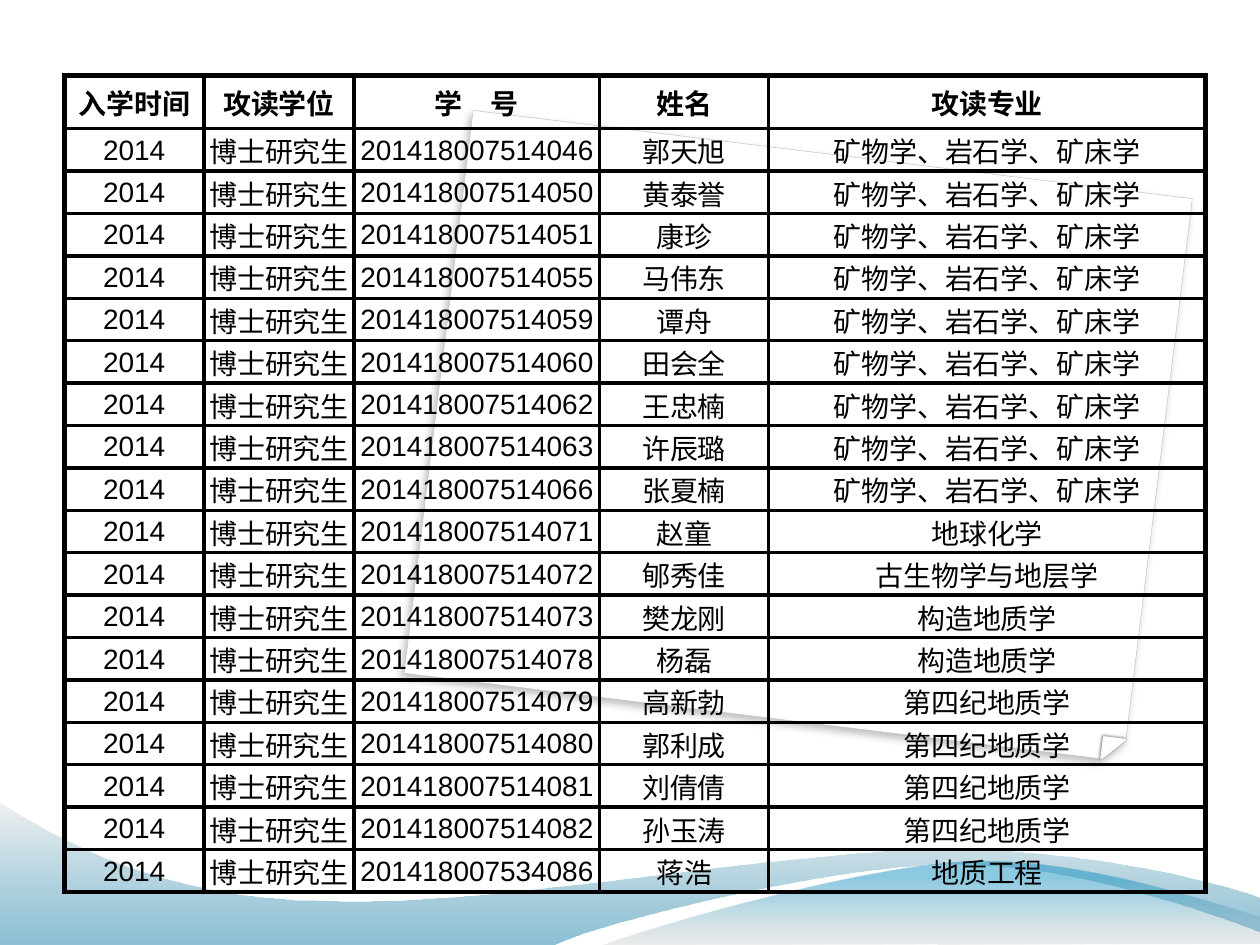
"""Build a slide with the roster of doctoral students enrolled in 2014."""
import pptx
import pptx.dml.color
import pptx.enum.shapes
import pptx.enum.text
import pptx.oxml
import pptx.oxml.ns
import pptx.util
from pptx.util import Inches

BLACK = pptx.dml.color.RGBColor(0x00, 0x00, 0x00)
WHITE = pptx.dml.color.RGBColor(0xFF, 0xFF, 0xFF)
PAPER_EDGE = pptx.dml.color.RGBColor(0xC0, 0xC0, 0xC0)
DEEP_BLUE = pptx.dml.color.RGBColor(0x00, 0x74, 0xA1)
BRIGHT_BLUE = pptx.dml.color.RGBColor(0x00, 0x8B, 0xBF)
PALE_GREY = pptx.dml.color.RGBColor(0xE7, 0xE7, 0xE7)
MID_GREY = pptx.dml.color.RGBColor(0xBD, 0xBD, 0xBD)
SHAPES = pptx.enum.shapes.MSO_SHAPE
HEADINGS = ["入学时间", "攻读学位", "学　号", "姓名", "攻读专业"]
COLUMN_WIDTHS = [1.11, 1.19, 1.95, 1.34, 3.47]
MINERALOGY = "矿物学、岩石学、矿床学"
STRUCTURAL = "构造地质学"
QUATERNARY = "第四纪地质学"
STUDENTS = [
    ("201418007514046", "郭天旭", MINERALOGY),
    ("201418007514050", "黄泰誉", MINERALOGY),
    ("201418007514051", "康珍", MINERALOGY),
    ("201418007514055", "马伟东", MINERALOGY),
    ("201418007514059", "谭舟", MINERALOGY),
    ("201418007514060", "田会全", MINERALOGY),
    ("201418007514062", "王忠楠", MINERALOGY),
    ("201418007514063", "许辰璐", MINERALOGY),
    ("201418007514066", "张夏楠", MINERALOGY),
    ("201418007514071", "赵童", "地球化学"),
    ("201418007514072", "郇秀佳", "古生物学与地层学"),
    ("201418007514073", "樊龙刚", STRUCTURAL),
    ("201418007514078", "杨磊", STRUCTURAL),
    ("201418007514079", "高新勃", QUATERNARY),
    ("201418007514080", "郭利成", QUATERNARY),
    ("201418007514081", "刘倩倩", QUATERNARY),
    ("201418007514082", "孙玉涛", QUATERNARY),
    ("201418007534086", "蒋浩", "地质工程"),
]
BACK_WAVE = [
    (0, 7.5), (4.4, 7.5),
    (4.76, 7.32, 6.64, 6.86, 7.58, 6.86), (8.53, 6.86, 9.58, 7.24, 10, 7.4),
    (10.01, 7.13),
    (9.83, 7.05, 8.7, 6.73, 7.46, 6.74), (6.22, 6.74, 3.82, 7.21, 2.57, 7.15),
    (1.29, 7.14, 0.46, 6.66, -0.01, 6.36),
]
FRONT_WAVE = [
    (4.79, 7.5),
    (5.09, 7.38, 6.82, 6.87, 7.69, 6.84), (8.56, 6.8, 9.61, 7.17, 10, 7.28),
    (10, 7.49),
]


def xml(markup):
    namespace = pptx.oxml.ns.nsdecls("a")
    return pptx.oxml.parse_xml(markup.replace(" ", f" {namespace} ", 1))


class RosterSlide:
    latin_font = "Arial"
    chinese_font = "Noto Sans CJK SC"
    text_size = pptx.util.Pt(16)
    inner_border = 2.25
    outer_border = 3

    def __init__(self, slide):
        self.slide = slide

    def paper(self, kind, box, edge, edge_width, shadow, adjustments=()):
        sheet = self.slide.shapes.add_shape(kind, *map(Inches, box))
        for index, value in enumerate(adjustments):
            sheet.adjustments[index] = value
        sheet.rotation = 7
        properties = sheet.element.spPr
        properties.xfrm.set("flipV", "1")
        sheet.fill.solid()
        sheet.fill.fore_color.rgb = WHITE
        sheet.line.color.rgb = edge
        sheet.line.width = pptx.util.Pt(edge_width)
        sheet.shadow.inherit = False
        opacity, blur, distance, angle = shadow
        properties.find(pptx.oxml.ns.qn("a:effectLst")).append(xml(
            f'<a:outerShdw blurRad="{pptx.util.Pt(blur)}" dist="{pptx.util.Pt(distance)}"'
            f' dir="{angle * 60000}" algn="tl" rotWithShape="0">'
            f'<a:srgbClr val="{BLACK}"><a:alpha val="{opacity * 1000}"/></a:srgbClr>'
            '</a:outerShdw>'))

    def wave(self, segments, stops):
        ends = [(Inches(segment[-2]), Inches(segment[-1])) for segment in segments]
        builder = self.slide.shapes.build_freeform(*ends[0])
        builder.add_line_segments(ends[1:])
        wave = builder.convert_to_shape()
        properties = wave.element.spPr
        sides = list(properties.iter(pptx.oxml.ns.qn("a:lnTo")))
        for side, segment in zip(sides, segments[1:]):
            if len(segment) == 6:
                points = "".join(
                    f'<a:pt x="{Inches(x) - wave.left}" y="{Inches(y) - wave.top}"/>'
                    for x, y in zip(segment[::2], segment[1::2]))
                curve = f"<a:cubicBezTo >{points}</a:cubicBezTo>"
                side.getparent().replace(side, xml(curve))
        wave.shadow.inherit = False
        wave.line.fill.background()
        wave.fill.gradient()
        wave.fill.gradient_angle = 90
        for stop, (position, colour, _) in zip(wave.fill.gradient_stops, stops):
            stop.position = position
            stop.color.rgb = colour
        colours = list(properties.iter(pptx.oxml.ns.qn("a:srgbClr")))
        for colour, (_, _, opacity) in zip(colours, stops):
            for adjustment in list(colour):
                colour.remove(adjustment)
            colour.append(xml(f'<a:alpha val="{opacity * 1000}"/>'))

    def cell(self, cell, text, heading, borders):
        cell.text = text
        cell.vertical_anchor = pptx.enum.text.MSO_ANCHOR.MIDDLE
        if not heading:
            cell.margin_left = cell.margin_right = cell.margin_top = Inches(0.01)
            cell.margin_bottom = 0
        paragraph = cell.text_frame.paragraphs[0]
        paragraph.alignment = pptx.enum.text.PP_ALIGN.CENTER
        font = paragraph.font
        font.name = self.chinese_font if heading else self.latin_font
        font.size = self.text_size
        font.bold = heading
        font.color.rgb = BLACK
        latin = next(paragraph._p.iter(pptx.oxml.ns.qn("a:latin")))
        latin.addnext(xml(f'<a:ea typeface="{self.chinese_font}"/>'))
        properties = cell._tc.get_or_add_tcPr()
        for side, width in borders.items():
            properties.append(xml(
                f'<a:ln{side} w="{pptx.util.Pt(width)}"><a:solidFill>'
                f'<a:srgbClr val="{BLACK}"/></a:solidFill></a:ln{side}>'))
        cell.fill.background()

    def roster(self, rows, box, header_height):
        height = box[-1]
        frame = self.slide.shapes.add_table(
            len(rows), len(COLUMN_WIDTHS), *map(Inches, box))
        table = frame.table
        table.first_row = table.horz_banding = False
        for column, column_width in zip(table.columns, COLUMN_WIDTHS):
            column.width = Inches(column_width)
        for row in table.rows:
            row.height = Inches((height - header_height) / (len(rows) - 1))
        table.rows[0].height = Inches(header_height)
        for r, values in enumerate(rows):
            for c, text in enumerate(values):
                outer = {"L": c == 0, "R": c == len(values) - 1, "T": r == 0, "B": False}
                borders = {side: self.outer_border if is_outer else self.inner_border
                           for side, is_outer in outer.items()}
                self.cell(table.cell(r, c), text, r == 0, borders)


def main():
    deck = pptx.Presentation()
    deck.slide_width, deck.slide_height = Inches(10), Inches(7.5)
    page = RosterSlide(deck.slides.add_slide(deck.slide_layouts[6]))
    page.paper(SHAPES.SNIP_ROUND_RECTANGLE, (3.46, 1.21, 5.75, 4.5),
               PAPER_EDGE, 0.25, (25, 5, 3, 125), (0, 0.036))
    page.paper(SHAPES.RIGHT_TRIANGLE, (8.75, 5.86, 0.17, 0.17),
               WHITE, 1, (47, 1.6, 0.5, 215))
    page.wave(BACK_WAVE, [(0, DEEP_BLUE, 45), (1, PALE_GREY, 55)])
    page.wave(FRONT_WAVE, [(0, MID_GREY, 30), (0.8, BRIGHT_BLUE, 45)])
    rows = [HEADINGS] + [("2014", "博士研究生", *student) for student in STUDENTS]
    page.roster(rows, (0.51, 0.6, 9.06, 6.45), 0.39)
    deck.save("out.pptx")


if __name__ == "__main__":
    main()
